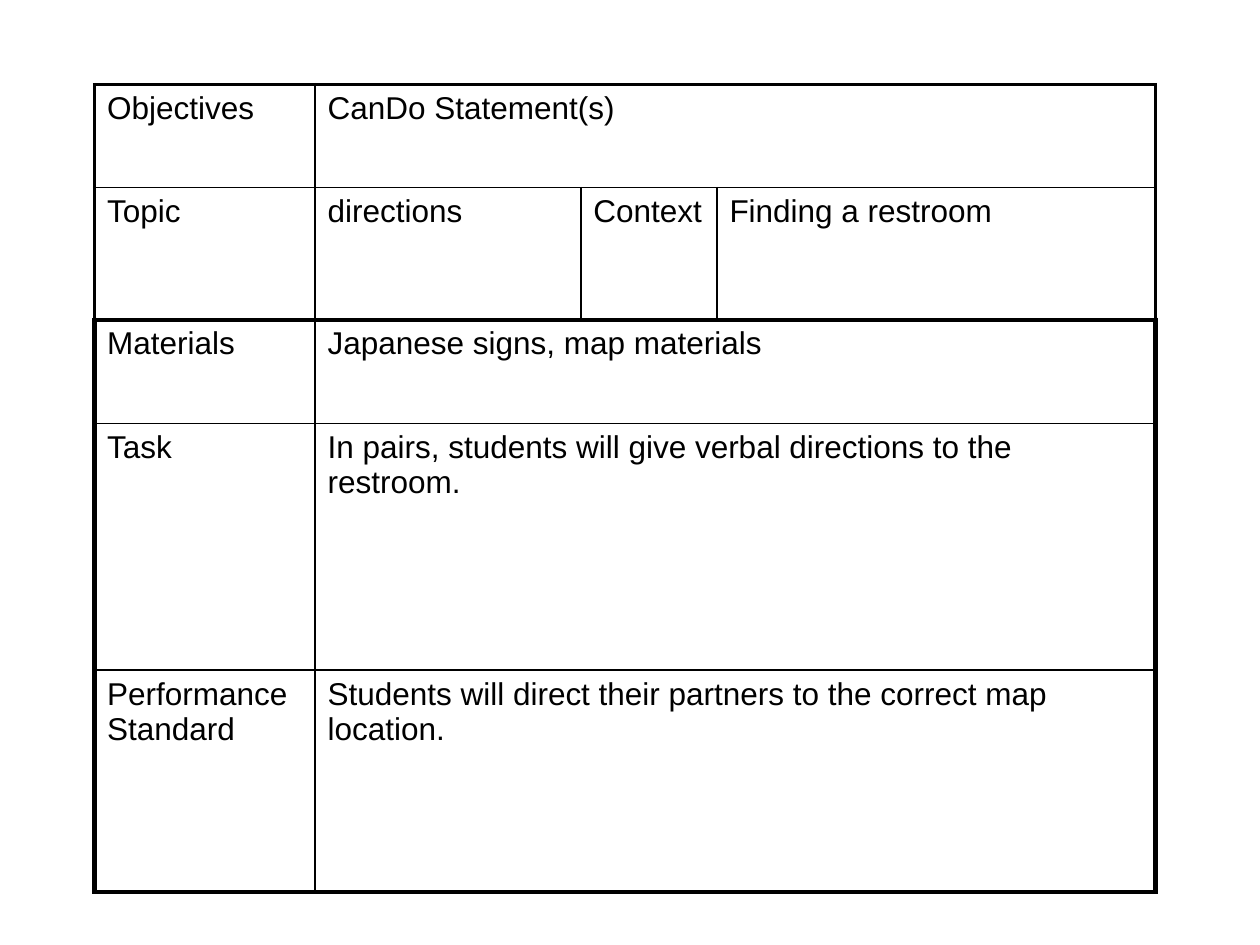
from lxml import etree
from pptx import Presentation
from pptx.dml.color import RGBColor
from pptx.oxml.ns import qn
from pptx.util import Inches, Pt

BLACK = RGBColor(0, 0, 0)
THIN, MID, THICK = 1, 2, 3

# Content: a row with two texts lets the second fill the rest of the row
ROWS = [
    ("Objectives", "CanDo Statement(s)"),
    ("Topic", "directions", "Context", "Finding a restroom"),
    ("Materials", "Japanese signs, map materials"),
    ("Task", "In pairs, students will give verbal directions to the restroom."),
    ("Performance Standard",
     "Students will direct their partners to the correct map location."),
]
WIDTHS = [1.75, 2.11, 1.08, 3.48]
HEIGHTS = [0.82, 1.05, 0.82, 1.96, 1.76]
LEFT, TOP = 0.75, 0.67

# Line weights: rules from top to bottom, and the outer side of each row
RULES = [MID, THIN, THICK, THIN, THIN, THICK]
SIDES = [MID, MID, THICK, THICK, THICK]


def add_edge(cell, tag, weight):
    props = cell._tc.get_or_add_tcPr()
    line = etree.SubElement(props, qn(tag), w=str(Pt(weight)))
    fill = etree.SubElement(line, qn("a:solidFill"))
    etree.SubElement(fill, qn("a:srgbClr"), val=str(BLACK))


def style_cell(cell, row, col, last):
    edges = {
        "a:lnL": SIDES[row] if col == 0 else THIN,
        "a:lnR": SIDES[row] if last else THIN,
        "a:lnT": RULES[row],
        "a:lnB": RULES[row + 1],
    }
    for tag, weight in edges.items():
        add_edge(cell, tag, weight)
    cell.fill.background()


def write(cell, words):
    cell.text = words
    font = cell.text_frame.paragraphs[0].font
    font.name, font.size, font.bold = "Arial", Pt(18), False
    font.color.rgb = BLACK


deck = Presentation()
deck.slide_width, deck.slide_height = Inches(10), Inches(7.5)
slide = deck.slides.add_slide(deck.slide_layouts[6])

# Table grid
table = slide.shapes.add_table(
    len(HEIGHTS), len(WIDTHS), Inches(LEFT), Inches(TOP),
    Inches(sum(WIDTHS)), Inches(sum(HEIGHTS))).table
table.first_row = table.horz_banding = False
for col, width in zip(table.columns, WIDTHS):
    col.width = Inches(width)
for row, height in zip(table.rows, HEIGHTS):
    row.height = Inches(height)

# Cells
end = len(WIDTHS) - 1
for r, texts in enumerate(ROWS):
    if len(texts) == 2:
        table.cell(r, 1).merge(table.cell(r, end))
    for c, words in enumerate(texts):
        cell = table.cell(r, c)
        write(cell, words)
        style_cell(cell, r, c, c == len(texts) - 1)
    for c in range(len(texts), end + 1):
        style_cell(table.cell(r, c), r, c, c == end)

deck.save("out.pptx")
